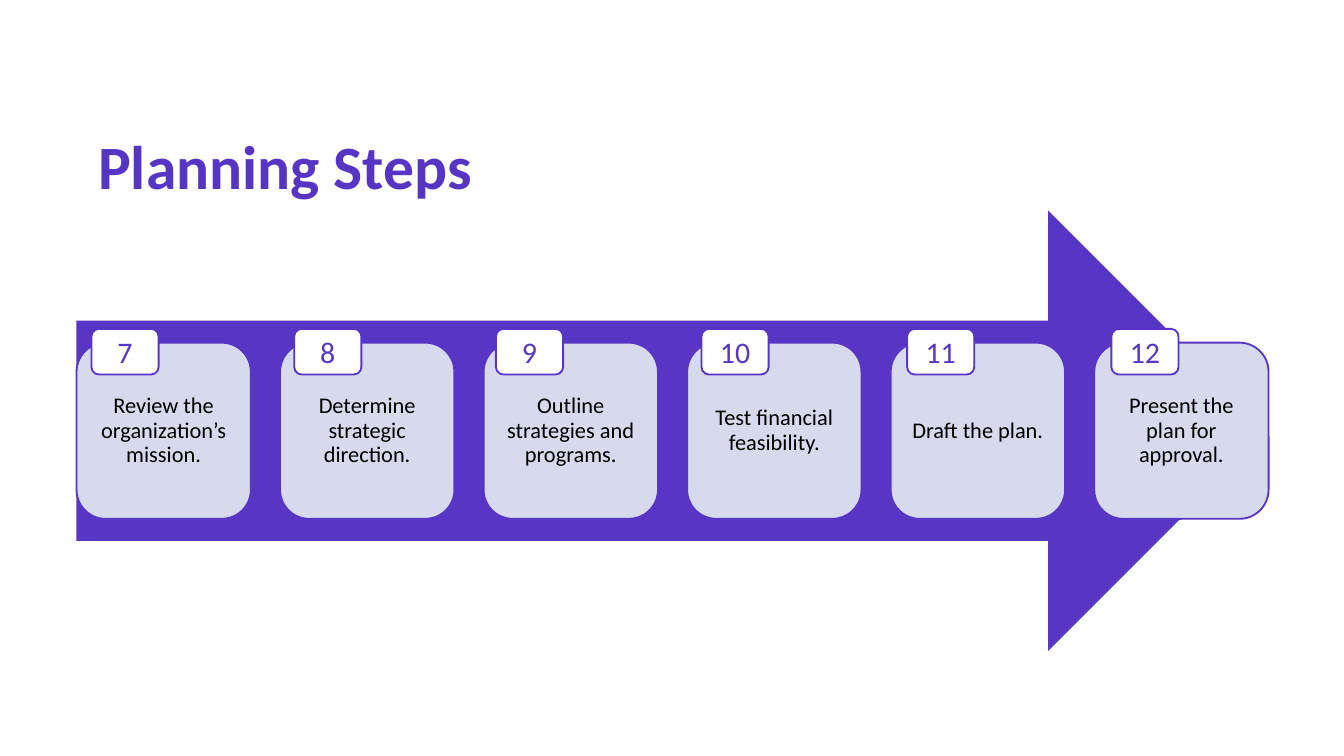
from pptx import Presentation
from pptx.dml.color import RGBColor
from pptx.enum.shapes import MSO_SHAPE as Shape
from pptx.enum.text import MSO_ANCHOR as Anchor, MSO_AUTO_SIZE as AutoSize, PP_ALIGN as Align
from pptx.util import Pt

PURPLE = RGBColor(0x57, 0x36, 0xC5)
TITLE_PURPLE = RGBColor(0x57, 0x35, 0xC4)
LAVENDER = RGBColor(0xD7, 0xD9, 0xED)
WHITE = RGBColor(0xFF, 0xFF, 0xFF)
BLACK = RGBColor(0, 0, 0)
FONT = "Calibri"

FIRST_NUMBER = 7
# Step wording and the distance of its number badge from the card's left edge
STEPS = [
    ("Review the organization’s mission.", 8),
    ("Determine strategic direction.", 7.6),
    ("Outline strategies and programs.", 6.6),
    ("Test financial feasibility.", 7.7),
    ("Draft the plan.", 8.8),
    ("Present the plan for approval.", 9.2),
]


def write(frame, text, size, color, align, bold=False, spacing=1.0):
    frame.word_wrap = True
    frame.auto_size = AutoSize.NONE
    frame.vertical_anchor = Anchor.MIDDLE
    para = frame.paragraphs[0]
    para.text = text
    para.alignment = align
    para.line_spacing = spacing
    font = para.font
    font.name, font.size, font.bold = FONT, Pt(size), bold
    font.color.rgb = color


def add_box(page, kind, box, fill, line=None):
    shape = page.shapes.add_shape(kind, *map(Pt, box))
    shape.shadow.inherit = False
    shape.fill.solid()
    shape.fill.fore_color.rgb = fill
    if line is None:
        shape.line.fill.background()
    else:
        shape.line.color.rgb = line
        shape.line.width = Pt(1)
    return shape


def place_title(page, box, text):
    title = page.shapes.title
    title.left, title.top, title.width, title.height = map(Pt, box)
    write(title.text_frame, text, 33, TITLE_PURPLE, Align.LEFT, bold=True, spacing=0.9)


def place_step(page, box, number, text, badge_offset):
    left, top, _, _ = box

    # Card with the step's wording
    frame = add_box(page, Shape.ROUNDED_RECTANGLE, box, LAVENDER, PURPLE).text_frame
    frame.margin_left = frame.margin_right = Pt(3.6)
    frame.margin_top = frame.margin_bottom = Pt(3.6)
    write(frame, text, 12, BLACK, Align.CENTER, spacing=0.9)

    # Number badge over the card's top edge
    badge_box = (left + badge_offset, top - 7.4, 36, 24.5)
    badge = add_box(page, Shape.ROUNDED_RECTANGLE, badge_box, WHITE, PURPLE)
    write(badge.text_frame, str(number), 16, PURPLE, Align.CENTER)


def place_process(page, box):
    left, top, width, height = box
    add_box(page, Shape.RIGHT_ARROW, box, PURPLE)

    # Cards spread evenly along the arrow, centred on its shaft
    card_width, card_height = 93.4, 94.4
    pitch = (width - card_width) / (len(STEPS) - 1)
    card_top = top + (height - card_height) / 2
    for index, (text, badge_offset) in enumerate(STEPS):
        card_box = (left + index * pitch, card_top, card_width, card_height)
        place_step(page, card_box, FIRST_NUMBER + index, text, badge_offset)


def main():
    deck = Presentation()
    deck.slide_width, deck.slide_height = Pt(720), Pt(405)
    page = deck.slides.add_slide(deck.slide_layouts[5])
    place_title(page, (45.4, 69.8, 620.6, 42.5), "Planning Steps")
    place_process(page, (41, 112.8, 638.6, 236))
    deck.save("out.pptx")


if __name__ == "__main__":
    main()
